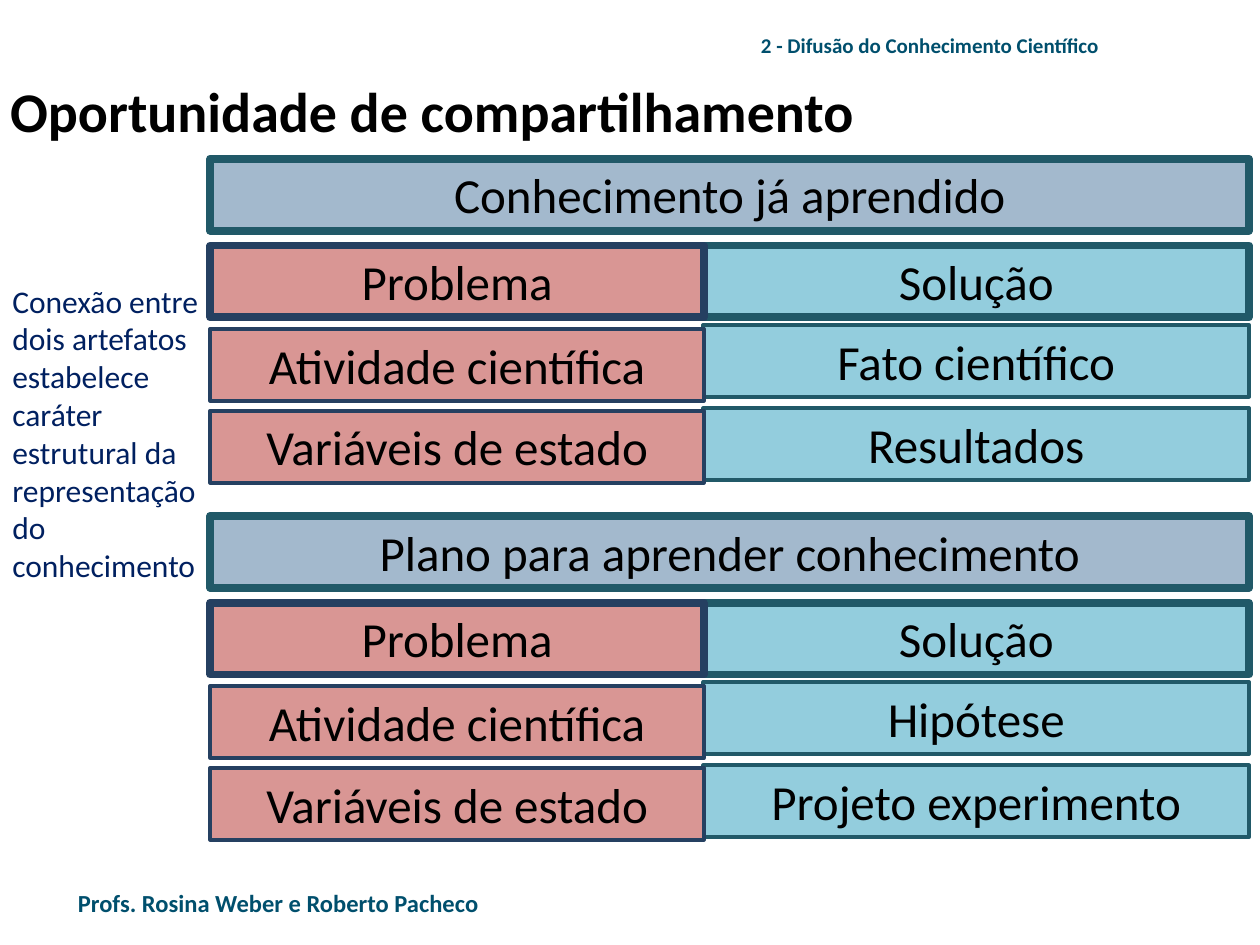
from pptx import Presentation
from pptx.dml.color import RGBColor
from pptx.enum.shapes import MSO_SHAPE
from pptx.enum.text import MSO_ANCHOR, MSO_AUTO_SIZE, PP_ALIGN
from pptx.util import Cm, Pt

BLACK = RGBColor(0x00, 0x00, 0x00)
NAVY = RGBColor(0x00, 0x20, 0x60)
PETROL = RGBColor(0x00, 0x4F, 0x6D)
GREY_BLUE = RGBColor(0xA3, 0xB9, 0xCD)
AQUA = RGBColor(0x93, 0xCD, 0xDD)
ROSE = RGBColor(0xD9, 0x96, 0x94)
TEAL_LINE = RGBColor(0x21, 0x59, 0x68)
BLUE_LINE = RGBColor(0x25, 0x40, 0x61)

THICK, THIN = 4.5, 2.25
BOX_HEIGHT = 1.45
LEFT_X, LEFT_WIDTH = 4.24, 9.95
RIGHT_X, RIGHT_WIDTH = 14.18, 11.0
FULL_WIDTH = RIGHT_X + RIGHT_WIDTH - LEFT_X
# Row offsets below the top of a block's banner
HEADER_ROW = 1.75
LEFT_ROWS = (3.43, 5.08)
RIGHT_ROWS = (3.35, 5.03)


class SlideBuilder:
    font = "Calibri"

    def __init__(self, prs):
        self.s = prs.slides.add_slide(prs.slide_layouts[5])

    def set_text(self, shape, text, size, color, bold=False,
                 align=PP_ALIGN.LEFT, anchor=MSO_ANCHOR.TOP):
        tf = shape.text_frame
        tf.text = text
        tf.word_wrap = True
        tf.auto_size = MSO_AUTO_SIZE.NONE
        tf.vertical_anchor = anchor
        p = tf.paragraphs[0]
        p.alignment = align
        r = p.runs[0]
        r.font.name = self.font
        r.font.size = Pt(size)
        r.font.bold = bold
        r.font.color.rgb = color
        return p

    def title(self, text, x, y, w, h, indent):
        sp = self.s.shapes.title
        sp.left, sp.top, sp.width, sp.height = Cm(x), Cm(y), Cm(w), Cm(h)
        p = self.set_text(sp, text, 32, BLACK, True, anchor=MSO_ANCHOR.MIDDLE)
        p._p.get_or_add_pPr().set("marL", str(Cm(indent)))

    def label(self, text, x, y, w, h, size, color, **style):
        sp = self.s.shapes.add_textbox(Cm(x), Cm(y), Cm(w), Cm(h))
        self.set_text(sp, text, size, color, **style)

    def box(self, text, x, y, w, fill, line, line_width):
        sp = self.s.shapes.add_shape(
            MSO_SHAPE.RECTANGLE, Cm(x), Cm(y), Cm(w), Cm(BOX_HEIGHT))
        sp.shadow.inherit = False
        sp.fill.solid()
        sp.fill.fore_color.rgb = fill
        sp.line.color.rgb = line
        sp.line.width = Pt(line_width)
        self.set_text(sp, text, 28, BLACK, align=PP_ALIGN.CENTER)

    def block(self, top, banner, solutions):
        """A banner over a problem column and a solution column."""
        right = (RIGHT_X, RIGHT_WIDTH, AQUA, TEAL_LINE)
        left = (LEFT_X, LEFT_WIDTH, ROSE, BLUE_LINE)
        problems = ("Atividade científica", "Variáveis de estado")
        columns = ((right, "Solução", solutions, RIGHT_ROWS),
                   (left, "Problema", problems, LEFT_ROWS))
        for (x, w, fill, line), header, items, rows in columns:
            for text, row in zip(items, rows):
                self.box(text, x, top + row, w, fill, line, THIN)
            self.box(header, x, top + HEADER_ROW, w, fill, line, THICK)
        self.box(banner, LEFT_X, top, FULL_WIDTH, GREY_BLUE, TEAL_LINE, THICK)


def main():
    prs = Presentation()
    prs.slide_width, prs.slide_height = Cm(25.4), Cm(19.05)
    slide = SlideBuilder(prs)

    # Running header, footer and title
    slide.label("2 - Difusão do Conhecimento Científico",
                15.09, 0.53, 10.11, 0.76, 12, PETROL, bold=True)
    slide.label("Profs. Rosina Weber e Roberto Pacheco",
                1.32, 17.78, 9.19, 0.86, 14, PETROL, bold=True)
    slide.title("Oportunidade de compartilhamento",
                -1.07, 1.27, 25.2, 1.9, indent=1.02)

    # The two knowledge artefacts
    slide.block(3.2, "Conhecimento já aprendido",
                ("Fato científico", "Resultados"))
    slide.block(10.4, "Plano para aprender conhecimento",
                ("Hipótese", "Projeto experimento"))

    # Side note
    slide.label("Conexão entre dois artefatos estabelece caráter estrutural "
                "da representação do conhecimento",
                0, 3.38, 4.45, 10.69, 18, NAVY, anchor=MSO_ANCHOR.MIDDLE)

    prs.save("out.pptx")


if __name__ == "__main__":
    main()
